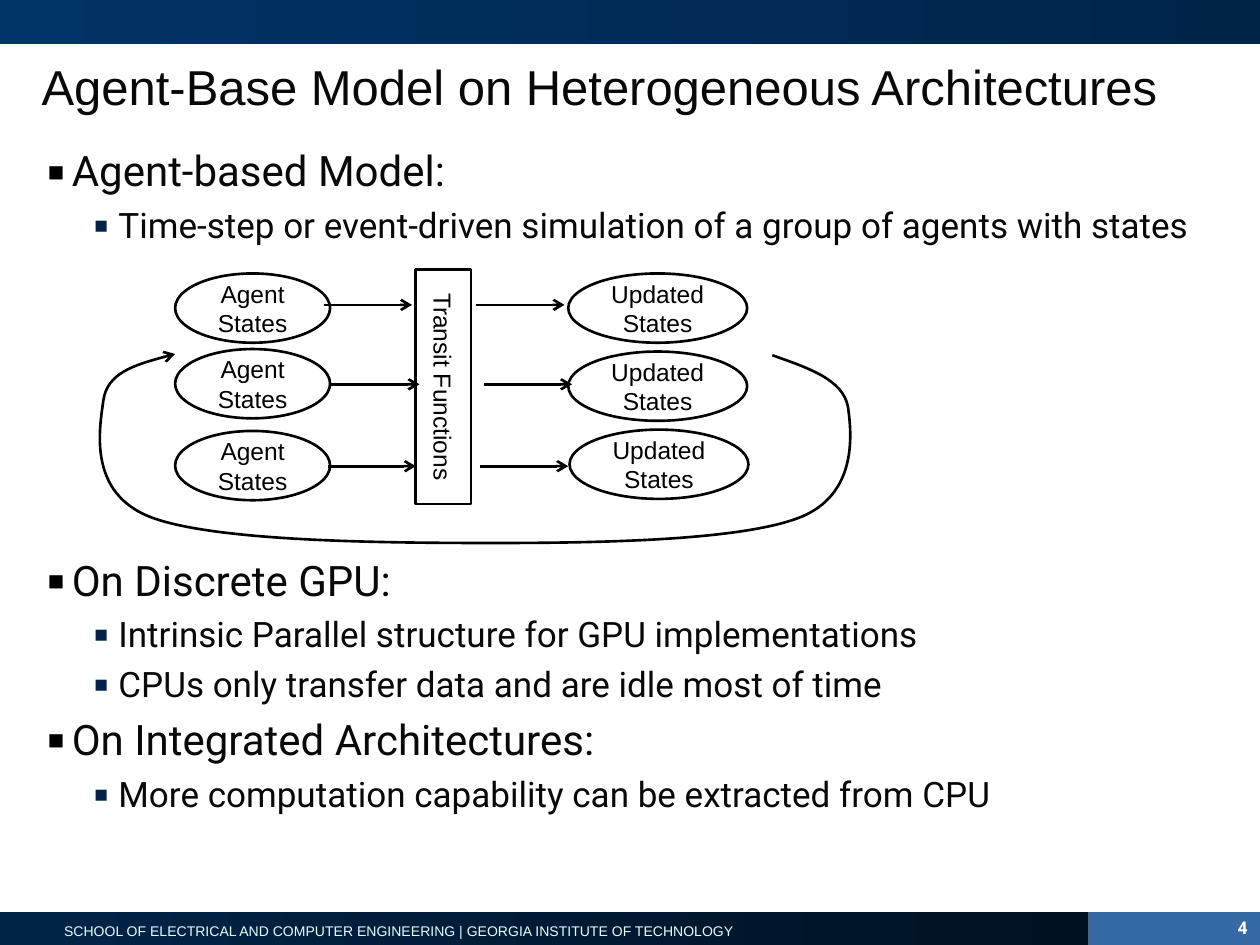
from lxml.etree import SubElement
from pptx import Presentation
from pptx.dml.color import RGBColor
from pptx.enum.shapes import MSO_CONNECTOR as Connector, MSO_SHAPE as Preset
from pptx.enum.text import MSO_ANCHOR as Anchor, MSO_AUTO_SIZE as AutoSize, PP_ALIGN as Align
from pptx.oxml.ns import qn
from pptx.util import Inches, Pt

BLACK, WHITE, INK, NAVY = "000000", "FFFFFF", "080808", "002448"
NO_INSETS = dict(margin_left=0, margin_top=0, margin_right=0, margin_bottom=0)

BULLETS = [
    (0, "Agent-based Model:", 6),
    (1, "Time-step or event-driven simulation of a group of agents with states", 5),
    (0, "On Discrete GPU:", 177),
    (1, "Intrinsic Parallel structure for GPU implementations", 5),
    (1, "CPUs only transfer data and are idle most of time", 5),
    (0, "On Integrated Architectures:", 6),
    (1, "More computation capability can be extracted from CPU", 5),
]
LEVELS = [
    dict(size=24, margin=0.19, color=BLACK),
    dict(size=20, margin=0.56, color=NAVY),
]
FEEDBACK_CURVE = [
    (5.33, 0.68),
    (5.61, 0.78), (5.89, 0.87), (5.93, 1.09),
    (5.96, 1.30), (6.01, 1.79), (5.54, 1.97),
    (5.07, 2.15), (3.97, 2.17), (3.12, 2.17),
    (2.26, 2.17), (0.93, 2.16), (0.41, 1.97),
    (-0.11, 1.78), (-0.01, 1.26), (0.02, 1.04),
    (0.05, 0.82), (0.32, 0.74), (0.59, 0.67),
]


def rgb(value):
    return RGBColor.from_string(value)


def apply(target, values):
    for name, value in values.items():
        setattr(target, name, value)


def write(paragraph, text, size, color, font="Arial", bold=False, **layout):
    run = paragraph.add_run()
    run.text = text
    apply(run.font, dict(size=Pt(size), name=font, bold=bold))
    run.font.color.rgb = rgb(color)
    apply(paragraph, layout)


def add_panel(slide, box, preset=Preset.RECTANGLE, fill=WHITE, outline=None):
    shape = slide.shapes.add_shape(preset, *map(Inches, box))
    shape.shadow.inherit = False
    if isinstance(fill, tuple):
        shape.fill.gradient()
        shape.fill.gradient_angle = 180
        for stop, color in zip(shape.fill.gradient_stops, fill):
            stop.color.rgb = rgb(color)
    else:
        shape.fill.solid()
        shape.fill.fore_color.rgb = rgb(fill)
    if outline:
        style_line(shape, outline)
    else:
        shape.line.fill.background()
    return shape


def style_line(shape, color, arrow=False):
    shape.line.width = Pt(1.5)
    shape.line.color.rgb = rgb(color)
    if arrow:
        line = shape.element.spPr.find(qn("a:ln"))
        SubElement(line, qn("a:tailEnd"), type="arrow")


def add_node(slide, box, text, preset):
    shape = add_panel(slide, box, preset, outline=BLACK)
    apply(shape.text_frame, dict(word_wrap=True, vertical_anchor=Anchor.MIDDLE))
    write(shape.text_frame.paragraphs[0], text, 14, BLACK, alignment=Align.CENTER)
    return shape


def add_arrow(slide, start, end, height):
    arrow = slide.shapes.add_connector(
        Connector.STRAIGHT, *map(Inches, (start, height, end, height)))
    style_line(arrow, BLACK, arrow=True)
    SubElement(arrow.element.spPr, qn("a:effectLst"))


def add_label(slide, box, text, size, color, wrap=True, **format_values):
    frame = slide.shapes.add_textbox(*map(Inches, box)).text_frame
    frame.word_wrap = wrap
    write(frame.paragraphs[0], text, size, color, **format_values)


def add_curve(slide, left, top, points):
    corners = [(Inches(left + x), Inches(top + y)) for x, y in points]
    builder = slide.shapes.build_freeform(*corners[0])
    builder.add_line_segments(corners[1:], close=False)
    shape = builder.convert_to_shape()
    shape.shadow.inherit = False
    shape.fill.background()
    style_line(shape, BLACK, arrow=True)
    segments = list(shape.element.iter(qn("a:lnTo")))
    for index in range(0, len(segments), 3):
        bezier = SubElement(segments[index].getparent(), qn("a:cubicBezTo"))
        for segment in segments[index:index + 3]:
            bezier.append(segment[0])
            segment.getparent().remove(segment)


def place(shape, box):
    names = ("left", "top", "width", "height")
    apply(shape, dict(zip(names, map(Inches, box))))
    apply(shape.text_frame, dict(NO_INSETS, word_wrap=True, auto_size=AutoSize.NONE))


def fill_title(shape, box, text):
    place(shape, box)
    shape.text_frame.vertical_anchor = Anchor.MIDDLE
    write(shape.text_frame.paragraphs[0], text, 28, INK,
          alignment=Align.LEFT, line_spacing=0.93)


def fill_body(shape, box):
    place(shape, box)
    frame = shape.text_frame
    for index, (level, text, gap) in enumerate(BULLETS):
        paragraph = frame.add_paragraph() if index else frame.paragraphs[0]
        style = LEVELS[level]
        write(paragraph, text, style["size"], INK, "Roboto",
              level=level, line_spacing=0.98, space_before=Pt(gap))
        properties = paragraph._p.get_or_add_pPr()
        properties.set("marL", str(Inches(style["margin"])))
        properties.set("indent", str(Inches(-0.19)))
        bullet_color = SubElement(properties, qn("a:buClr"))
        SubElement(bullet_color, qn("a:srgbClr"), val=style["color"])
        SubElement(properties, qn("a:buSzPct"), val="65000")
        SubElement(properties, qn("a:buFont"), typeface="Arial")
        SubElement(properties, qn("a:buChar"), char="■")


def add_bands(slide, width, height):
    top, split = height - 0.26, 8.64
    add_panel(slide, (0, 0, width, 0.35), fill=(NAVY, "003366"))
    add_panel(slide, (0, top, split, 0.26), fill=("001121", NAVY))
    add_panel(slide, (split, top, width - split, 0.26), fill="366AA4")
    add_label(slide, (0.38, top + 0.03, 5.58, 0.24),
              "SCHOOL OF ELECTRICAL AND COMPUTER ENGINEERING | GEORGIA INSTITUTE OF TECHNOLOGY",
              8, "E5FFFF", wrap=False, alignment=Align.CENTER)
    add_label(slide, (width - 0.56, top, 0.56, 0.26), "4", 10, WHITE,
              font="Roboto", bold=True, alignment=Align.RIGHT, line_spacing=0.98)


def add_agent_diagram(slide, left, top):
    rows = [
        (0.03, 0.03, 3.71, 0.28, 1.77, 2.98),
        (0.63, 0.65, 3.71, 0.91, 1.83, 3.04),
        (1.28, 1.27, 3.72, 1.56, 1.80, 3.01),
    ]
    for agent_top, updated_top, updated_left, arrow_top, first, second in rows:
        add_node(slide, (left + 0.59, top + agent_top, 1.23, 0.55),
                 "Agent States", Preset.OVAL)
        add_node(slide, (left + updated_left, top + updated_top, 1.42, 0.55),
                 "Updated States", Preset.OVAL)
    transit = add_node(slide, (left + 2.5, top, 0.44, 1.86),
                       "Transit Functions", Preset.RECTANGLE)
    transit.text_frame._txBody.bodyPr.set("vert", "vert")
    for *_, arrow_top, first, second in rows:
        for start in (first, second):
            add_arrow(slide, left + start, left + start + 0.7, top + arrow_top)
    add_curve(slide, left, top, FEEDBACK_CURVE)


def main():
    presentation = Presentation()
    apply(presentation, dict(slide_width=Inches(10), slide_height=Inches(7.5)))
    slide = presentation.slides.add_slide(presentation.slide_layouts[1])
    title, body = slide.placeholders
    add_bands(slide, 10, 7.5)
    fill_title(title, (0.33, 0.42, 9.3, 0.57),
               "Agent-Base Model on Heterogeneous Architectures")
    fill_body(body, (0.38, 1.17, 9.3, 5.53))
    add_agent_diagram(slide, 0.8, 2.14)
    presentation.save("out.pptx")


if __name__ == "__main__":
    main()
